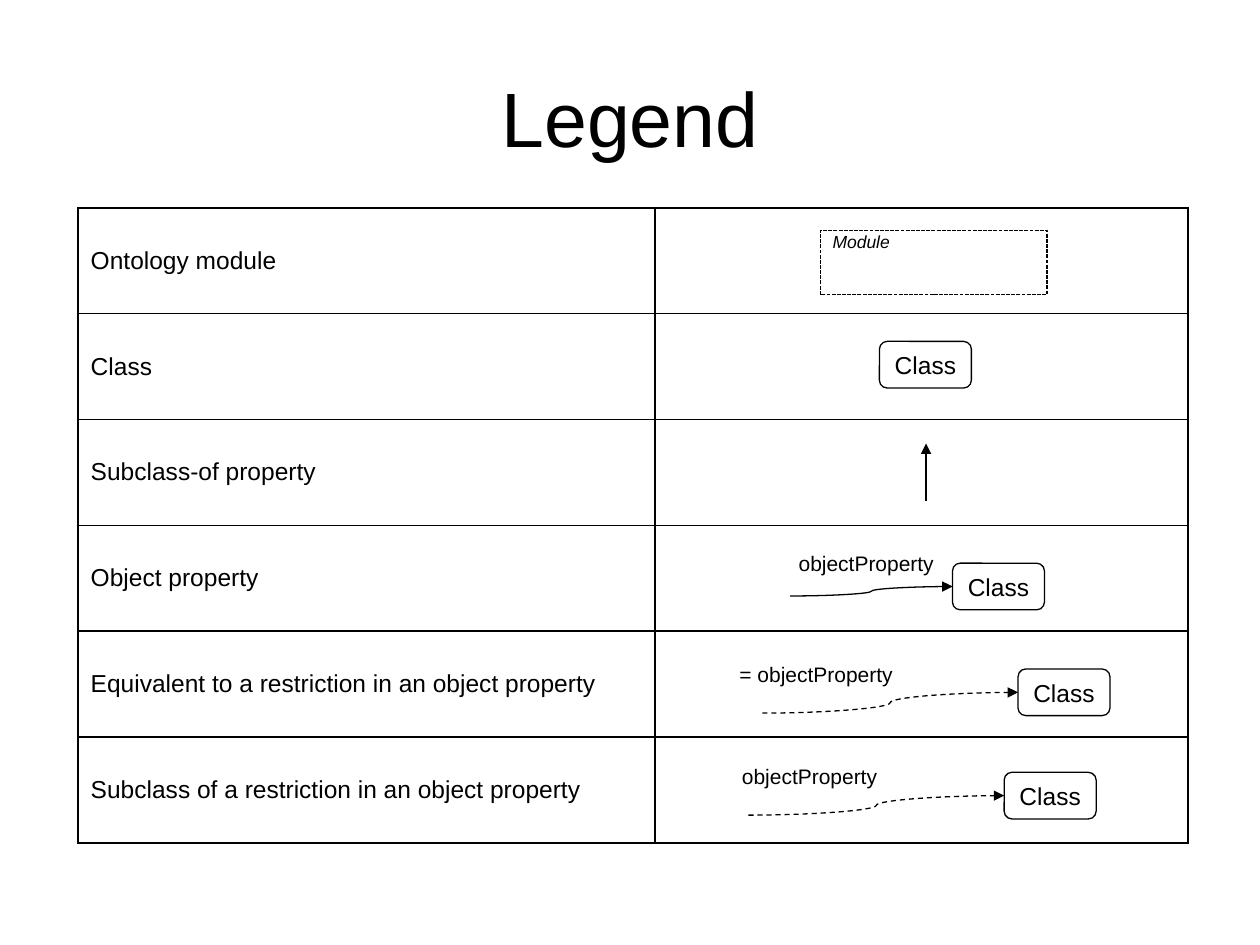
from dataclasses import dataclass

from pptx import Presentation
from pptx.dml.color import RGBColor
from pptx.enum.dml import MSO_LINE as Dash
from pptx.enum.shapes import MSO_CONNECTOR as Connector, MSO_SHAPE as Shape
from pptx.enum.text import MSO_ANCHOR as Anchor, MSO_AUTO_SIZE as AutoSize, PP_ALIGN as Align
from pptx.oxml.ns import qn
from pptx.util import Inches, Pt
from lxml.etree import SubElement

BLACK = RGBColor(0, 0, 0)
FONT = "Arial"
LINE_WIDTH = Pt(0.75)
CLASS_WIDTH, CLASS_HEIGHT = 0.73, 0.37
ROW_HEIGHT = 0.84
COLUMN_WIDTHS = (4.58, 4.23)
MEANINGS = (
    "Ontology module",
    "Class",
    "Subclass-of property",
    "Object property",
    "Equivalent to a restriction in an object property",
    "Subclass of a restriction in an object property",
)


@dataclass(frozen=True)
class Property:
    """A labelled curved arrow that ends at the left side of a class box."""
    label: str
    label_left: float
    label_top: float
    label_width: float
    start_x: float
    start_y: float
    class_left: float
    class_top: float
    dash: Dash = Dash.SOLID


PROPERTIES = (
    Property("objectProperty", 6.24, 4.32, 1.3, 6.27, 4.73, 7.56, 4.47),
    Property("= objectProperty", 5.77, 5.2, 1.45, 6.05, 5.66, 8.08, 5.31, Dash.DASH),
    Property("objectProperty", 5.79, 6.01, 1.3, 5.94, 6.47, 7.97, 6.13, Dash.DASH),
)


def write(frame, text: str, *, size: float, italic: bool = False, align=Align.LEFT,
          anchor=Anchor.TOP, wrap: bool = True) -> None:
    frame.word_wrap = wrap
    frame.vertical_anchor = anchor
    para = frame.paragraphs[0]
    para.alignment = align
    span = para.add_run()
    span.text = text
    span.font.name = FONT
    span.font.size = Pt(size)
    span.font.italic = italic
    span.font.color.rgb = BLACK


def style_line(line, dash=Dash.SOLID) -> None:
    line.color.rgb = BLACK
    line.width = LINE_WIDTH
    line.dash_style = dash


def add_outline(page, kind, left: float, top: float, width: float, height: float,
                dash=Dash.SOLID):
    box = page.shapes.add_shape(kind, Inches(left), Inches(top), Inches(width), Inches(height))
    box.shadow.inherit = False
    box.fill.background()
    style_line(box.line, dash)
    return box


def add_module(page) -> None:
    frame = add_outline(page, Shape.RECTANGLE, 6.51, 1.83, 1.8, 0.51, Dash.SQUARE_DOT).text_frame
    frame.margin_top = 0
    write(frame, "Module", size=10, italic=True)


def add_class(page, left: float, top: float) -> None:
    frame = add_outline(page, Shape.ROUNDED_RECTANGLE, left, top,
                        CLASS_WIDTH, CLASS_HEIGHT).text_frame
    write(frame, "Class", size=14, align=Align.CENTER, anchor=Anchor.MIDDLE, wrap=False)
    frame.auto_size = AutoSize.SHAPE_TO_FIT_TEXT


def add_arrow(page, kind, start: tuple[float, float], end: tuple[float, float],
              dash=Dash.SOLID) -> None:
    arrow = page.shapes.add_connector(kind, *map(Inches, start + end))
    style_line(arrow.line, dash)
    SubElement(arrow.line._get_or_add_ln(), qn("a:tailEnd"), type="triangle")
    SubElement(arrow._element.spPr, qn("a:effectLst"))


def add_property(page, item: Property) -> None:
    end = (item.class_left, item.class_top + CLASS_HEIGHT / 2)
    add_arrow(page, Connector.CURVE, (item.start_x, item.start_y), end, item.dash)
    label = page.shapes.add_textbox(Inches(item.label_left), Inches(item.label_top),
                                    Inches(item.label_width), Inches(0.3))
    write(label.text_frame, item.label, size=12, wrap=False)
    add_class(page, item.class_left, item.class_top)


def add_borders(cell) -> None:
    properties = cell._tc.get_or_add_tcPr()
    for side in ("lnL", "lnR", "lnT", "lnB"):
        border = SubElement(properties, qn(f"a:{side}"), w=str(Pt(1)))
        fill = SubElement(border, qn("a:solidFill"))
        SubElement(fill, qn("a:srgbClr"), val=str(BLACK))


def add_legend_table(page) -> None:
    table = page.shapes.add_table(
        len(MEANINGS), len(COLUMN_WIDTHS), Inches(0.62), Inches(1.65),
        Inches(sum(COLUMN_WIDTHS)), Inches(ROW_HEIGHT * len(MEANINGS))).table
    table.first_row = table.horz_banding = False
    for column, width in zip(table.columns, COLUMN_WIDTHS):
        column.width = Inches(width)
    for cell in table.iter_cells():
        add_borders(cell)
        cell.fill.background()
    for row, meaning in enumerate(MEANINGS):
        cell = table.cell(row, 0)
        write(cell.text_frame, meaning, size=14)
        cell.vertical_anchor = Anchor.MIDDLE


def main() -> None:
    deck = Presentation()
    deck.slide_width, deck.slide_height = Inches(10), Inches(7.5)
    page = deck.slides.add_slide(deck.slide_layouts[5])
    title = page.shapes.title
    title.left, title.top = Inches(0.5), Inches(0.3)
    title.width, title.height = Inches(9), Inches(1.25)
    write(title.text_frame, "Legend", size=44, align=Align.CENTER, anchor=Anchor.MIDDLE)

    add_legend_table(page)
    add_module(page)
    add_class(page, 6.98, 2.71)
    add_arrow(page, Connector.STRAIGHT, (7.35, 3.98), (7.35, 3.52))
    for item in PROPERTIES:
        add_property(page, item)
    deck.save("out.pptx")


if __name__ == "__main__":
    main()
